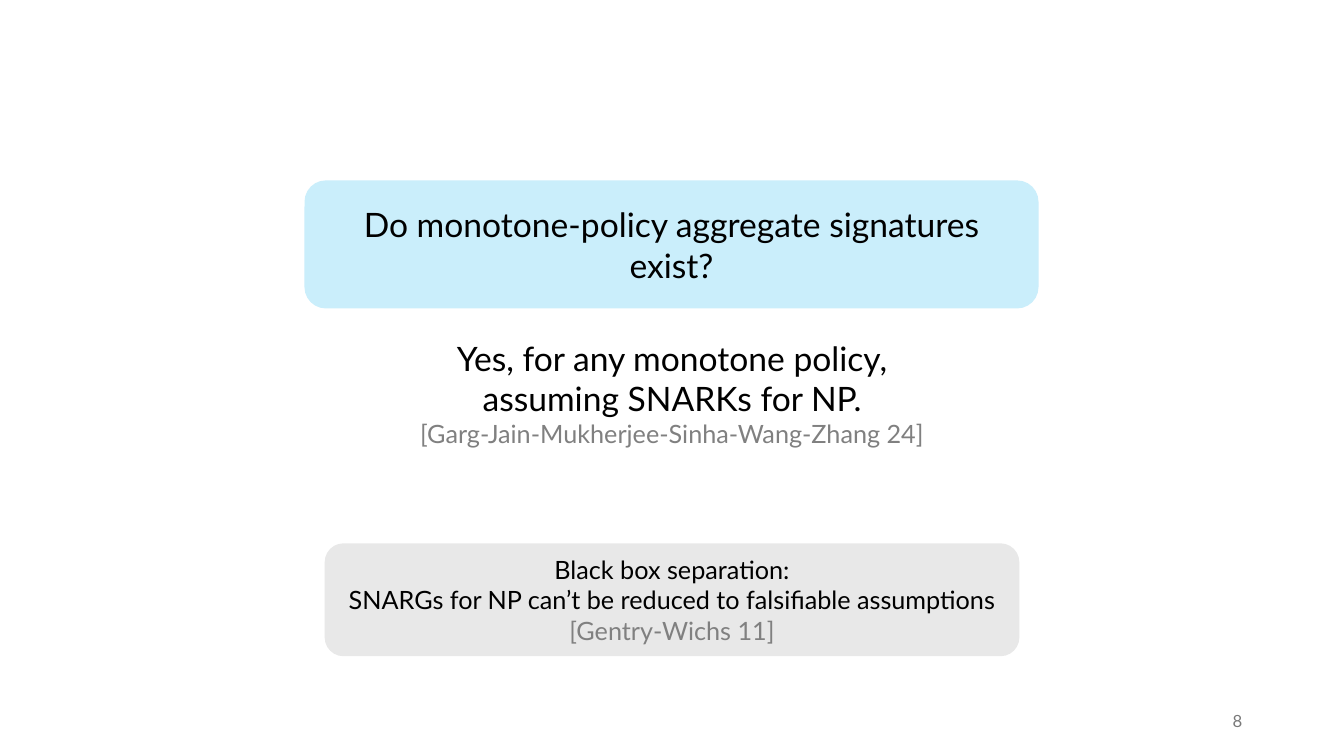
from dataclasses import dataclass

from pptx import Presentation
from pptx.dml.color import RGBColor
from pptx.enum import shapes, text
from pptx.util import Inches, Pt

FONT = "Lato"
BLACK = RGBColor(0x00, 0x00, 0x00)
CITATION_GRAY = RGBColor(0x80, 0x80, 0x80)
NUMBER_GRAY = RGBColor(0x79, 0x79, 0x79)
PALE_BLUE = RGBColor(0xCA, 0xEE, 0xFB)
PALE_GRAY = RGBColor(0xE8, 0xE8, 0xE8)


@dataclass
class Para:
    text: str
    size: int
    color: RGBColor = BLACK


@dataclass
class Box:
    left: float
    top: float
    width: float
    height: float
    paras: list[Para]
    fill: RGBColor | None = None
    align: text.PP_ALIGN = text.PP_ALIGN.CENTER
    anchor: text.MSO_ANCHOR = text.MSO_ANCHOR.MIDDLE


BOXES = [
    Box(9.42, 6.95, 3, 0.4, [Para("8", 12, NUMBER_GRAY)],
        align=text.PP_ALIGN.RIGHT),
    Box(3.02, 1.79, 7.28, 1.27,
        [Para("Do monotone-policy aggregate signatures exist?", 24)],
        fill=PALE_BLUE),
    Box(3.22, 3.3, 6.89, 1.25,
        [Para("Yes, for any monotone policy,\nassuming SNARKs for NP.", 24),
         Para("[Garg-Jain-Mukherjee-Sinha-Wang-Zhang 24]", 18)],
        anchor=text.MSO_ANCHOR.TOP),
    Box(3.22, 5.39, 6.89, 1.12,
        [Para("Black box separation:\n"
              "SNARGs for NP can’t be reduced to falsifiable assumptions\n"
              "[Gentry-Wichs 11]", 18)],
        fill=PALE_GRAY),
]


def write_paras(tf, box: Box) -> None:
    """Fill the frame; bracketed citations turn gray."""
    tf.word_wrap = True
    tf.vertical_anchor = box.anchor
    for i, para in enumerate(box.paras):
        p = tf.add_paragraph() if i else tf.paragraphs[0]
        p.text = para.text
        p.alignment = box.align
        for r in p.runs:
            r.font.name = FONT
            r.font.size = Pt(para.size)
            is_citation = r.text.startswith("[")
            r.font.color.rgb = CITATION_GRAY if is_citation else para.color


def draw_box(s, box: Box) -> None:
    area = [Inches(v) for v in (box.left, box.top, box.width, box.height)]
    if box.fill is None:
        sp = s.shapes.add_textbox(*area)
    else:
        sp = s.shapes.add_shape(shapes.MSO_SHAPE.ROUNDED_RECTANGLE, *area)
        sp.shadow.inherit = False
        sp.fill.solid()
        sp.fill.fore_color.rgb = box.fill
        sp.line.fill.background()
    write_paras(sp.text_frame, box)


def main() -> None:
    prs = Presentation()
    prs.slide_width, prs.slide_height = Inches(13.33), Inches(7.5)
    s = prs.slides.add_slide(prs.slide_layouts[6])
    for box in BOXES:
        draw_box(s, box)
    prs.save("out.pptx")


if __name__ == "__main__":
    main()
